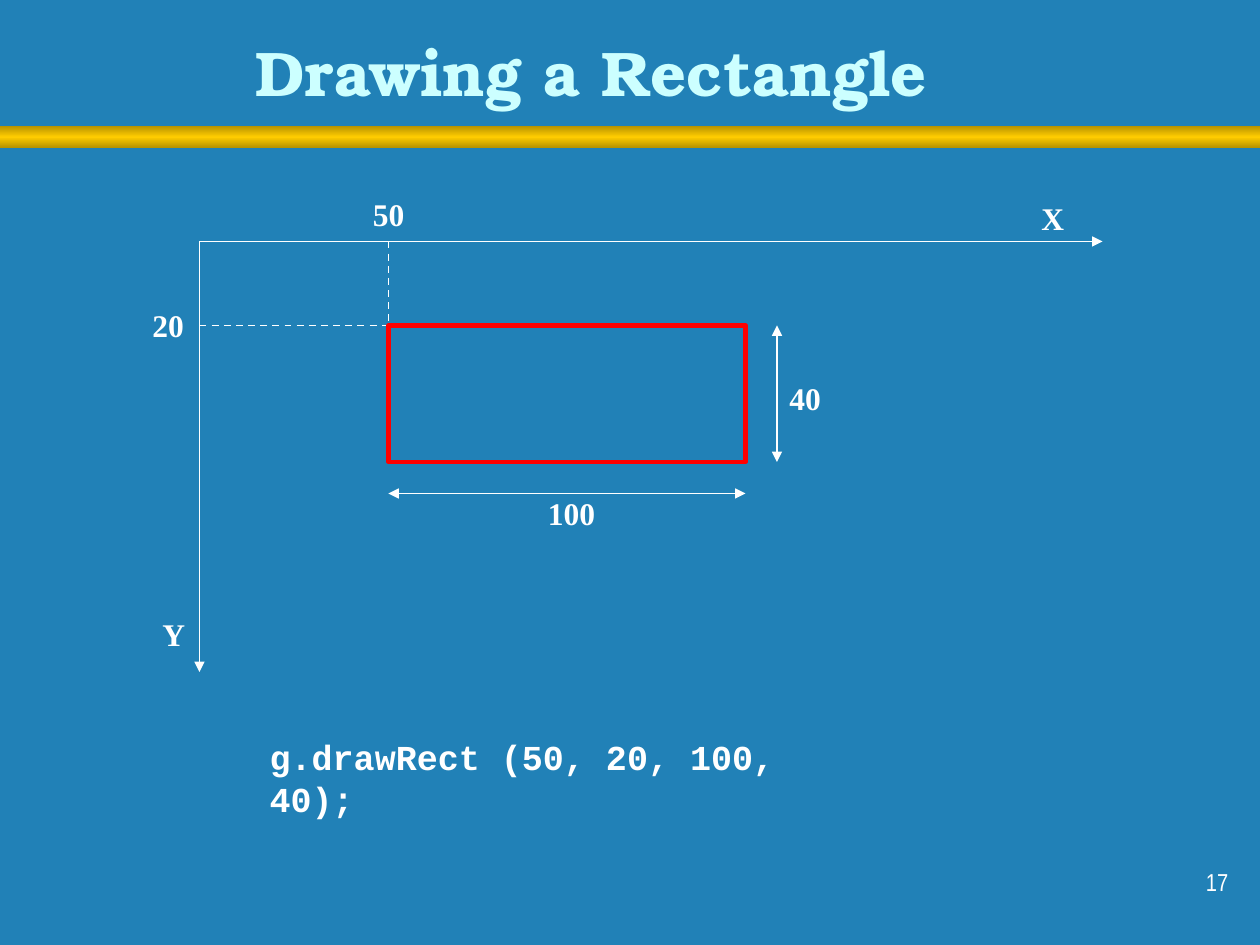
from copy import deepcopy

from lxml import etree
from pptx import Presentation
from pptx.dml.color import RGBColor
from pptx.enum.dml import MSO_LINE
from pptx.enum.shapes import MSO_CONNECTOR, MSO_SHAPE
from pptx.enum.text import MSO_ANCHOR, PP_ALIGN
from pptx.oxml.ns import qn
from pptx.util import Pt

BLUE = RGBColor(0x21, 0x81, 0xB7)
WHITE = RGBColor(0xFF, 0xFF, 0xFF)
CYAN = RGBColor(0xCC, 0xFF, 0xFF)
RED = RGBColor(0xFF, 0x00, 0x00)
GOLD = RGBColor(0xFF, 0xCC, 0x00)
BROWN = RGBColor(0xB6, 0x92, 0x00)
LEFT, CENTER, RIGHT = PP_ALIGN.LEFT, PP_ALIGN.CENTER, PP_ALIGN.RIGHT
TOP, BOTTOM = MSO_ANCHOR.TOP, MSO_ANCHOR.BOTTOM
DASH, STRAIGHT = MSO_LINE.DASH, MSO_CONNECTOR.STRAIGHT

# Content: axis origin and ends, the drawn rectangle, and the gap to its sizes
X0, Y0, X_END, Y_END = 114, 138, 630, 384
BOX_X, BOX_Y, BOX_W, BOX_H = 222, 186, 204, 78
GAP = 18
BOX_R, BOX_B = BOX_X + BOX_W, BOX_Y + BOX_H
DIM_X, DIM_Y = BOX_R + GAP, BOX_B + GAP

# Start x, y, end x, y, arrowheads, dashed
LINES = [
    (X0, Y0, X_END, Y0, ["tailEnd"], False),
    (X0, Y0, X0, Y_END, ["tailEnd"], False),
    (BOX_X, Y0, BOX_X, BOX_Y, [], True),
    (X0, BOX_Y, BOX_X, BOX_Y, [], True),
    (BOX_X, DIM_Y, BOX_R, DIM_Y, ["headEnd", "tailEnd"], False),
    (DIM_X, BOX_Y, DIM_X, BOX_B, ["headEnd", "tailEnd"], False),
]
# Text, left, top, width
LABELS = [
    ("X", 588, 110, 27.5),
    ("Y", 85.7, 348, 27.5),
    ("50", 206, 108, 32.5),
    ("20", 80, 171.4, 32.5),
    ("100", 306, 279, 41.5),
    ("40", 444, 213, 32.5),
]

prs = Presentation()
prs.slide_width, prs.slide_height = Pt(720), Pt(540)
slide = prs.slides.add_slide(prs.slide_layouts[6])
slide.background.fill.solid()
slide.background.fill.fore_color.rgb = BLUE
shapes = slide.shapes


def add_text(text, x, y, w, h, font, size, color=WHITE, bold=True,
             align=LEFT, anchor=TOP, wrap=True):
    frame = shapes.add_textbox(Pt(x), Pt(y), Pt(w), Pt(h)).text_frame
    frame.word_wrap = wrap
    frame.vertical_anchor = anchor
    para = frame.paragraphs[0]
    para.alignment = align
    run = para.add_run()
    run.text = text
    run.font.name, run.font.size, run.font.bold = font, Pt(size), bold
    run.font.color.rgb = color
    return frame


def add_line(x1, y1, x2, y2, heads, dashed):
    line = shapes.add_connector(STRAIGHT, Pt(x1), Pt(y1), Pt(x2), Pt(y2))
    line.line.color.rgb = WHITE
    line.line.width = Pt(1)
    if dashed:
        line.line.dash_style = DASH
    props = line._element.spPr
    for head in heads:
        etree.SubElement(props.find(qn("a:ln")), qn("a:" + head), type="triangle")
    etree.SubElement(props, qn("a:effectLst"))


# Gold bar under the title
bar = shapes.add_shape(MSO_SHAPE.PENTAGON, Pt(0), Pt(72), Pt(720), Pt(12.5))
bar.adjustments[0] = 0
bar.shadow.inherit = False
bar.line.fill.background()
bar.fill.gradient()
bar.fill.gradient_angle = 90
stops = bar._element.spPr.find(".//" + qn("a:gsLst"))
stops.append(deepcopy(stops[0]))
for stop, place, color in zip(bar.fill.gradient_stops, (0, 0.5, 1), (BROWN, GOLD, BROWN)):
    stop.position = place
    stop.color.rgb = color

# Title and page number
add_text("Drawing a Rectangle", 30, 12, 616, 54, "TeX Gyre Bonum", 36,
         CYAN, align=CENTER, anchor=BOTTOM)
add_text("17", 559, 492, 150, 36, "Arial Narrow", 14, bold=False, align=RIGHT)

# Axes, guides and size arrows
for item in LINES:
    add_line(*item)

# Rectangle
box = shapes.add_shape(MSO_SHAPE.RECTANGLE, Pt(BOX_X), Pt(BOX_Y), Pt(BOX_W), Pt(BOX_H))
box.shadow.inherit = False
box.fill.background()
box.line.color.rgb = RED
box.line.width = Pt(2.5)

# Labels
for text, x, y, w in LABELS:
    add_text(text, x, y, w, 29, "Times New Roman", 18, wrap=False)

# Code, with a right inset that breaks it before the last value
code = add_text("g.drawRect (50, 20, 100, 40);", 147, 417, 362, 31, "Courier New", 20)
code.margin_right = Pt(45)

prs.save("out.pptx")
